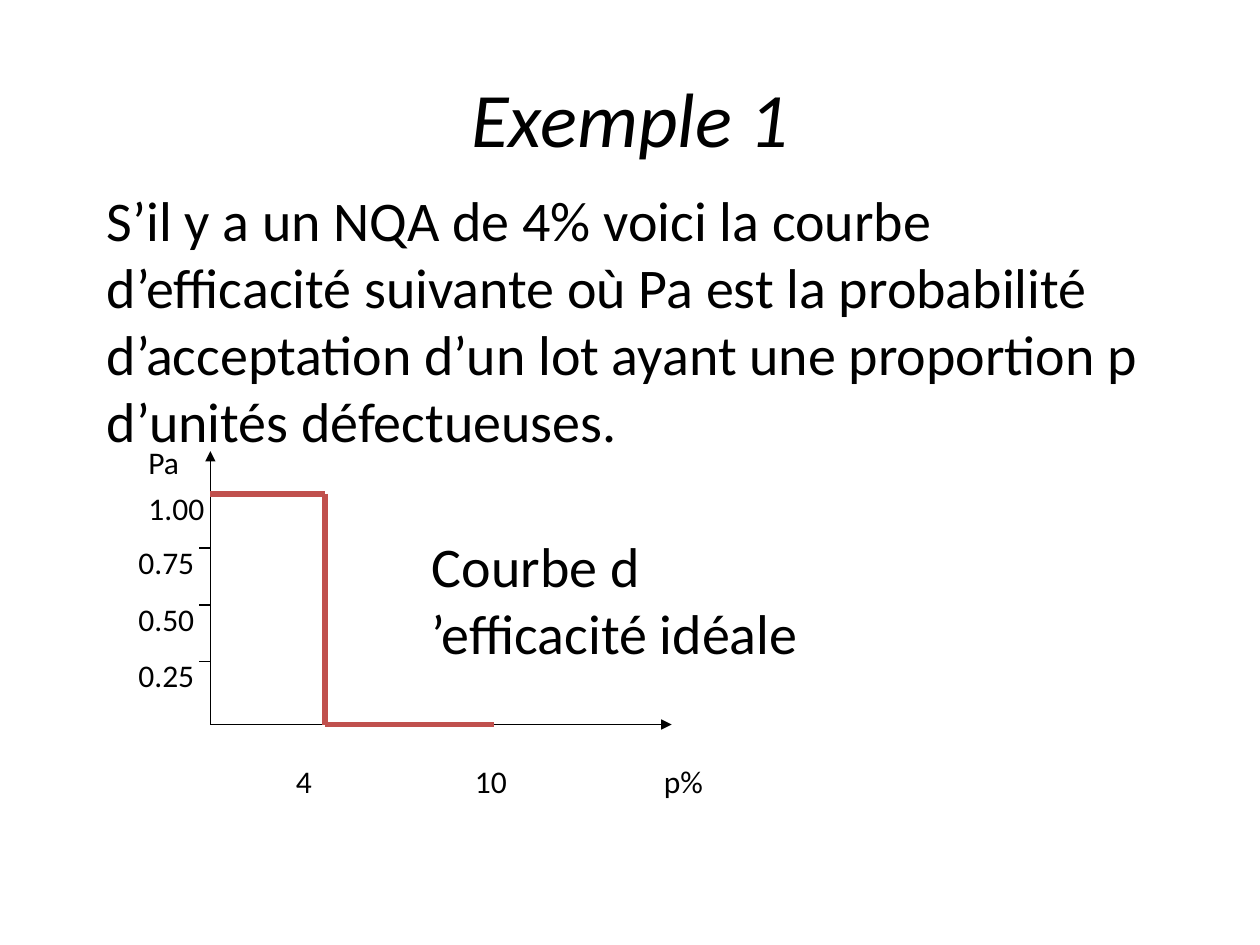
import pptx
import pptx.util
import pptx.dml.color
import pptx.enum.shapes
import pptx.enum.text
import pptx.oxml
import pptx.oxml.ns
import lxml.etree

Inches = pptx.util.Inches
HUES = {"ink": "000000", "curve": "C0504D"}


def paint(frame, size, italic=False):
    """Format every run of a text frame."""
    for para in frame.paragraphs:
        for run in para.runs:
            run.font.name = "Calibri"
            run.font.size = pptx.util.Pt(size)
            run.font.italic = italic
            run.font.color.rgb = pptx.dml.color.RGBColor.from_string(HUES["ink"])


def write(slide, box, text, size=18):
    """Add a wrapped text box."""
    frame = slide.shapes.add_textbox(*map(Inches, box)).text_frame
    frame.word_wrap = True
    frame.text = text
    paint(frame, size)


def rule(slide, start, end, hue="ink", width=1, arrow=False):
    """Draw a straight line, with an arrowhead at its end if asked."""
    line = slide.shapes.add_connector(
        pptx.enum.shapes.MSO_CONNECTOR.STRAIGHT, *map(Inches, start + end))
    line.line.color.rgb = pptx.dml.color.RGBColor.from_string(HUES[hue])
    line.line.width = pptx.util.Pt(width)
    if arrow:
        tip = lxml.etree.SubElement(
            line.line._get_or_add_ln(), pptx.oxml.ns.qn("a:tailEnd"))
        tip.set("type", "triangle")
    lxml.etree.SubElement(
        line._element.spPr, pptx.oxml.ns.qn("a:effectLst"))


def head(slide, box):
    """Place and format the title."""
    title = slide.shapes.title
    title.left, title.top, title.width, title.height = map(Inches, box)
    frame = title.text_frame
    frame.text = "Exemple 1"
    frame.vertical_anchor = pptx.enum.text.MSO_ANCHOR.MIDDLE
    frame.paragraphs[0].alignment = pptx.enum.text.PP_ALIGN.CENTER
    paint(frame, 44, italic=True)


def graph(slide, box):
    """Draw the axes, ticks, labels and ideal curve inside a box."""
    left, top, width, height = box
    right, base = left + width, top + height
    rule(slide, (left, base), (left, top), arrow=True)
    rule(slide, (left, base), (right, base), arrow=True)

    peak, drop, stop = top + 0.34, left + 0.91, left + 2.25
    points = [(left, peak), (drop, peak), (drop, base), (stop, base)]
    for start, end in zip(points, points[1:]):
        rule(slide, start, end, "curve", 3)

    for step, text in enumerate(("0.25", "0.50", "0.75")):
        level = base - 0.5 - 0.45 * step
        rule(slide, (left, level), (left - 0.09, level))
        write(slide, (left - 0.67, level - 0.09, 0.67, 0.3), text)
    write(slide, (left - 0.59, peak - 0.09, 0.67, 0.3), "1.00")
    write(slide, (left - 0.59, top - 0.11, 0.67, 0.37), "Pa")

    for shift, text in ((0.58, "4"), (2, "10"), (3.5, "p%")):
        write(slide, (left + shift, base + 0.25, 0.75, 0.37), text)
    write(slide, (left + 1.66, top + 0.59, 3.58, 1.17),
          "Courbe d\u00a0’efficacité idéale".replace("\u00a0", " "), 32)


def main():
    """Build and save the slide."""
    deck = pptx.Presentation()
    deck.slide_width, deck.slide_height = Inches(10), Inches(7.5)
    slide = deck.slides.add_slide(deck.slide_layouts[5])
    head(slide, (0.5, 0.3, 9, 1.25))
    write(slide, (0.75, 1.42, 8.5, 2.2),
          "S’il y a un NQA de 4% voici la courbe d’efficacité suivante où Pa "
          "est la probabilité d’acceptation d’un lot ayant une proportion p "
          "d’unités défectueuses.", 32)
    graph(slide, (1.67, 3.58, 3.66, 2.17))
    deck.save("out.pptx")


if __name__ == "__main__":
    main()
